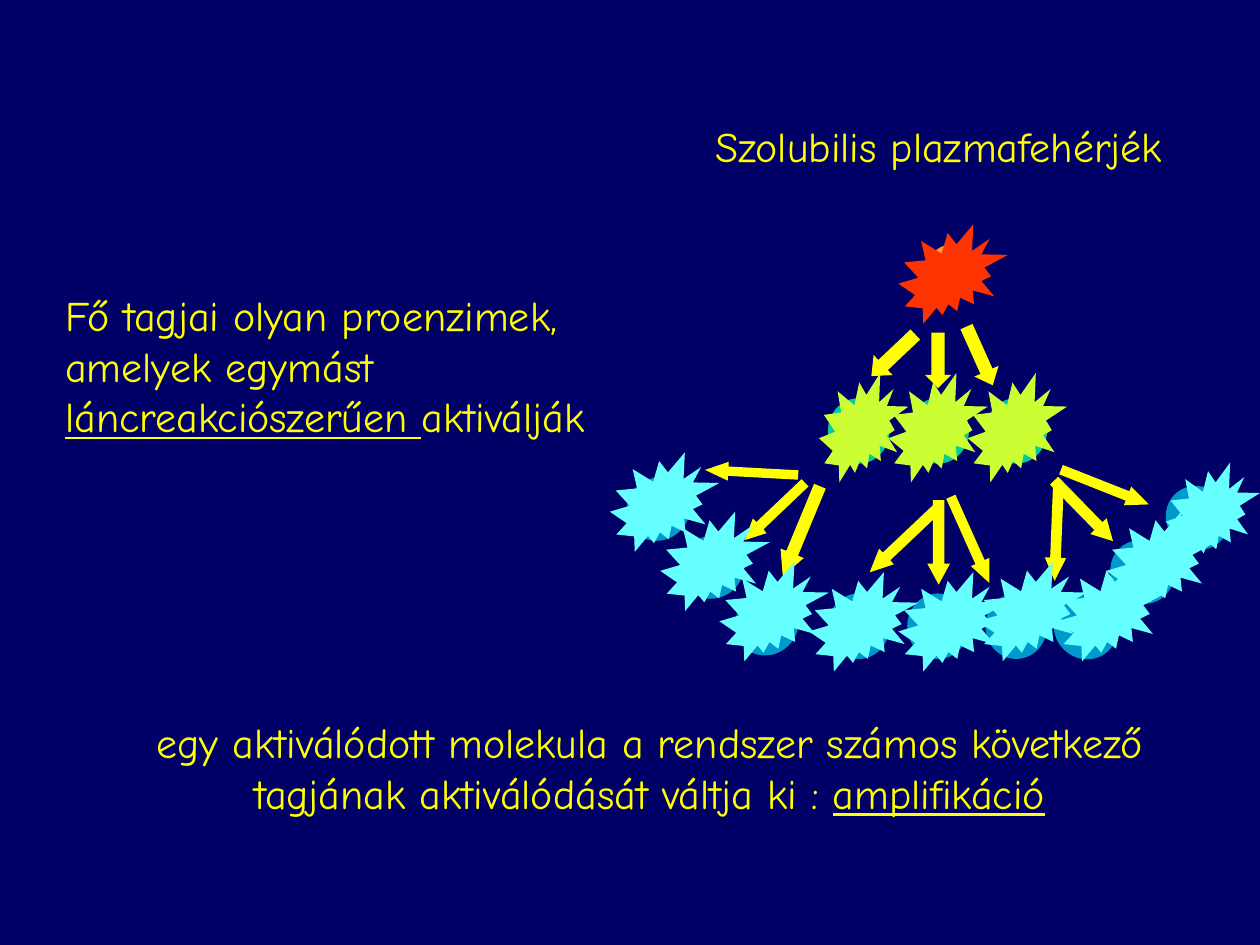
"""Build the slide on the chain reaction of soluble plasma proteins."""
from pptx import Presentation
from pptx.dml.color import RGBColor
from pptx.enum import shapes, text
from pptx.util import Inches, Pt

NAVY, YELLOW = "000066", "FFFF00"
KIND = shapes.MSO_SHAPE
ALIGN = text.PP_ALIGN

TEXTS = [
    ((5.16, 0.91, 4.58, 0.5), ALIGN.CENTER, [("Szolubilis plazmafehérjék", False)]),
    ((0.42, 2.25, 4.58, 1.7), ALIGN.LEFT, [
        ("Fő tagjai olyan proenzimek, amelyek egymást ", False),
        ("láncreakciószerűen ", True),
        ("aktiválják", False)]),
    ((0.51, 5.64, 9.29, 0.9), ALIGN.CENTER, [
        ("egy aktiválódott molekula a rendszer számos következő "
         "tagjának aktiválódását váltja ki : ", False),
        ("amplifikáció", True)]),
]

LEVELS = [
    {
        "disc": "FF9933", "size": (0.39, 0.39), "discs": [(7.36, 1.94, 0)],
        "arrows": [],
        "star": "FF3300", "stars": [(7.13, 1.78, 0.87, 0.79)],
    },
    {
        "disc": "00CC99", "size": (0.49, 0.52),
        "discs": [(6.57, 3.16, 0), (7.2, 3.16, 0), (7.82, 3.16, 0)],
        "arrows": [(7.34, 2.64, 0.21, 0.44, 0, 0.5),
                   (6.98, 2.58, 0.22, 0.48, 46.6, 0.58),
                   (7.67, 2.57, 0.21, 0.51, 335.9, 0.58)],
        "star": "CCFF33",
        "stars": [(6.5, 2.96, 0.71, 0.87), (7.05, 2.96, 0.79, 0.87),
                  (7.68, 2.96, 0.79, 0.87)],
    },
    {
        "disc": "0099CC", "size": (0.49, 0.52),
        "discs": [(6.57, 4.71, 0), (7.2, 4.71, 0), (7.82, 4.71, 0),
                  (4.98, 3.78, 46.5), (5.41, 4.24, 46.5), (5.84, 4.69, 46.5),
                  (8.37, 4.72, 315.7), (8.82, 4.28, 315.7), (9.26, 3.85, 315.7)],
        "arrows": [(7.36, 3.97, 0.18, 0.67, 0, 0.92),
                   (7.09, 3.91, 0.17, 0.75, 46.6, 1.08),
                   (7.62, 3.91, 0.16, 0.75, 335.9, 1.14),
                   (6.07, 3.73, 0.16, 0.66, 46.5, 1.03),
                   (5.89, 3.38, 0.15, 0.74, 93.1, 1.23),
                   (6.26, 3.83, 0.2, 0.77, 22.5, 0.97),
                   (8.51, 3.72, 0.18, 0.67, 315.7, 0.92),
                   (8.3, 3.86, 0.17, 0.75, 2.3, 1.08),
                   (8.69, 3.49, 0.16, 0.75, 291.6, 1.14)],
        "star": "66FFFF",
        "stars": [(x, y, 0.87, 0.79) for x, y in [
            (4.84, 3.59), (5.24, 4.06), (5.71, 4.46), (6.42, 4.54),
            (7.13, 4.54), (7.76, 4.46), (8.39, 4.46), (8.78, 4.06)]]
        + [(9.25, 3.67, 0.75, 0.79)],
    },
]


def paint(fill, color):
    """Give a fill one solid colour."""
    fill.solid()
    fill.fore_color.rgb = RGBColor.from_string(color)


def write(slide, box, runs, align=ALIGN.LEFT, size=24, font="Comic Neue", color=YELLOW):
    """Add a wrapped text box of one paragraph."""
    frame = slide.shapes.add_textbox(*map(Inches, box)).text_frame
    frame.word_wrap = True
    para = frame.paragraphs[0]
    para.alignment = align
    for words, under in runs:
        run = para.add_run()
        run.text = words
        run.font.size, run.font.name = Pt(size), font
        run.font.underline = under
        paint(run.font.fill, color)


def draw(slide, kind, box, color, turn=0):
    """Add a flat shape without outline."""
    shape = slide.shapes.add_shape(kind, *map(Inches, box))
    shape.shadow.inherit = False
    shape.line.fill.background()
    shape.rotation = turn
    paint(shape.fill, color)
    return shape


def main():
    """Lay out the texts and the three levels of the cascade."""
    deck = Presentation()
    deck.slide_width, deck.slide_height = Inches(10), Inches(7.5)
    slide = deck.slides.add_slide(deck.slide_layouts[6])
    paint(slide.background.fill, NAVY)
    for box, align, runs in TEXTS:
        write(slide, box, runs, align=align)
    for level in LEVELS:
        for x, y, turn in level["discs"]:
            draw(slide, KIND.OVAL, (x, y, *level["size"]), level["disc"], turn)
        for *box, turn, head in level["arrows"]:
            arrow = draw(slide, KIND.DOWN_ARROW, box, YELLOW, turn)
            arrow.adjustments[0], arrow.adjustments[1] = 0.5, head
        for box in level["stars"]:
            draw(slide, KIND.EXPLOSION2, box, level["star"])
    deck.save("out.pptx")


if __name__ == "__main__":
    main()
